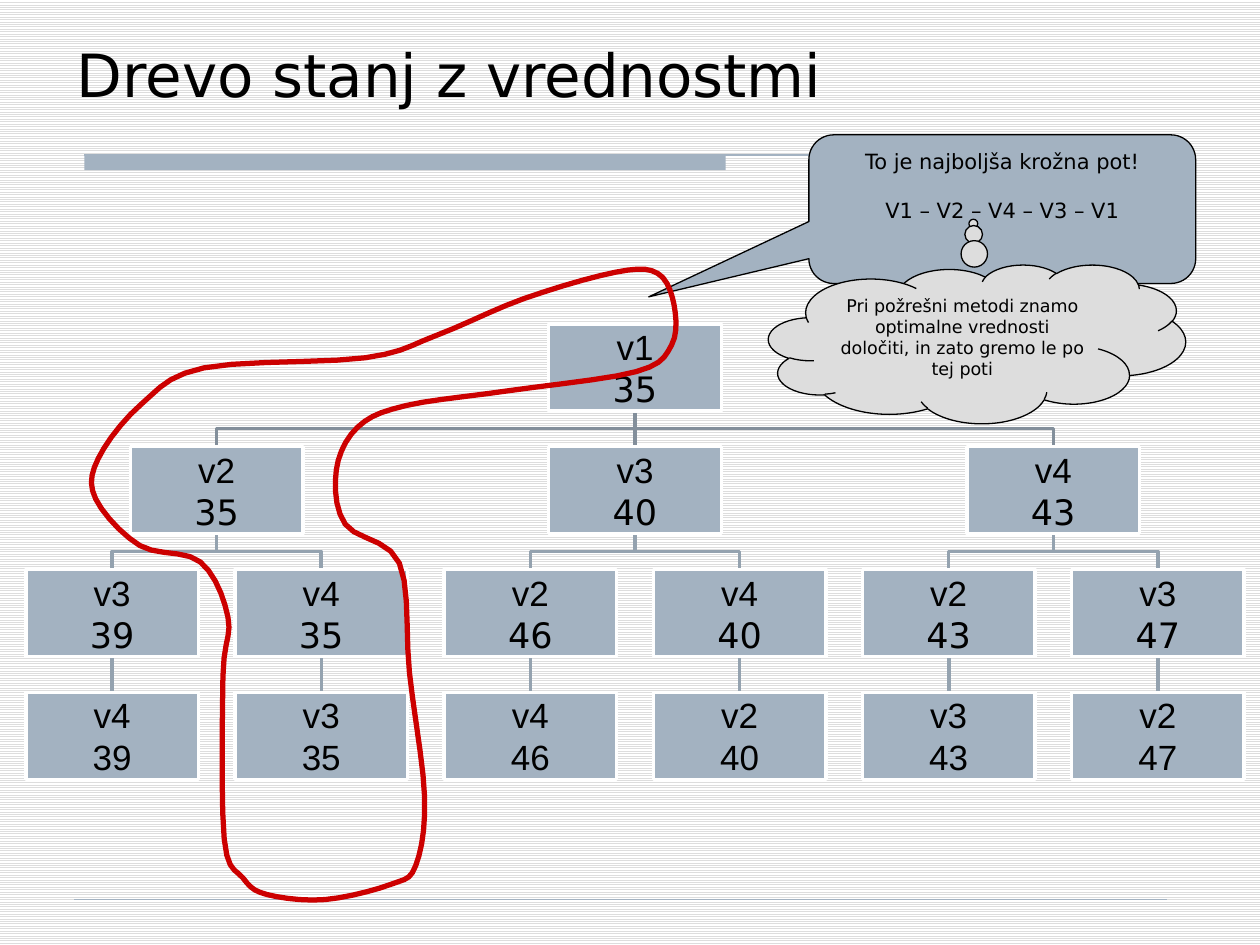
from dataclasses import dataclass

import pptx
import pptx.dml.color
import pptx.enum.dml
import pptx.enum.shapes
import pptx.enum.text
import pptx.oxml
import pptx.util

Inches, Pt = pptx.util.Inches, pptx.util.Pt
SHAPE = pptx.enum.shapes.MSO_SHAPE
ANCHOR = pptx.enum.text.MSO_ANCHOR
ALIGN = pptx.enum.text.PP_ALIGN

SANS, ARIAL = "DejaVu Sans", "Arial"
STEEL, GREY, BLACK, WHITE, RED = "A3B2C1", "DDDDDD", "000000", "FFFFFF", "CC0000"
ROOT_LINK, LINK = "838F9B", "94A2AF"

FIRST_CENTER, COLUMN_STEP = 0.89, 1.66
TOP, ROW_STEP = 2.57, 0.975
BOX_W, BOX_H = 1.37, 0.69

Point = tuple[float, float]


@dataclass
class State:
    name: str
    value: int
    children: tuple["State", ...] = ()
    x: float = 0
    level: int = 0

    @property
    def y(self) -> float:
        return TOP + self.level * ROW_STEP


@dataclass
class Callout:
    kind: int
    box: tuple[float, float, float, float]
    adjustments: tuple[float, ...]
    fill: str
    size: int
    lines: tuple[str, ...]


def branch(name: str, value: int, leaf: str) -> State:
    """A state with a single successor of the same value."""
    return State(name, value, (State(leaf, value),))


TREE = State("v1", 35, (
    State("v2", 35, (branch("v3", 39, "v4"), branch("v4", 35, "v3"))),
    State("v3", 40, (branch("v2", 46, "v4"), branch("v4", 40, "v2"))),
    State("v4", 43, (branch("v2", 43, "v3"), branch("v3", 47, "v2"))),
))

BEST_ROUTE = Callout(
    SHAPE.ROUNDED_RECTANGULAR_CALLOUT, (6.42, 1.07, 3.07, 1.18), (-0.914, 0.59, 0.167),
    STEEL, 12, ("To je najboljša krožna pot!", "V1 – V2 – V4 – V3 – V1"))
GREEDY = Callout(
    SHAPE.CLOUD_CALLOUT, (6.1, 2.1, 3.31, 1.26), (-0.009, -0.758), GREY, 10,
    ("Pri požrešni metodi znamo optimalne vrednosti določiti, in zato gremo le po tej poti",))

# Turning points of the loop around the best route, clockwise from the top
LOOP = [
    (4.89, 2.16), (5.22, 2.17), (5.35, 2.42), (5.33, 2.74), (5.05, 2.95), (4.05, 3.1),
    (3.22, 3.22), (2.84, 3.39), (2.67, 3.73), (2.74, 4.16), (3.17, 4.47), (3.25, 5.34),
    (3.37, 6.32), (3.3, 6.87), (3.1, 7.02), (2.58, 7.14), (2.12, 7.1), (1.93, 6.97),
    (1.78, 6.66), (1.77, 5.37), (1.81, 4.9), (1.59, 4.46), (1.11, 4.33), (0.76, 3.96),
    (0.78, 3.64), (1.12, 3.21), (1.62, 2.92), (2.9, 2.84), (3.47, 2.66), (4.16, 2.37),
]


def rgb(color: str) -> pptx.dml.color.RGBColor:
    return pptx.dml.color.RGBColor.from_string(color)


def set_line(sp, color: str, width: float) -> None:
    sp.line.color.rgb = rgb(color)
    sp.line.width = Pt(width)


def set_font(p, size: int, name: str) -> None:
    p.font.size, p.font.name = Pt(size), name
    p.font.color.rgb = rgb(BLACK)


def add_box(s, kind: int, box: tuple, fill: str):
    sp = s.shapes.add_shape(kind, *map(Inches, box))
    sp.shadow.inherit = False
    sp.fill.solid()
    sp.fill.fore_color.rgb = rgb(fill)
    return sp


def add_line(s, start: Point, end: Point, color: str, width: float) -> None:
    sp = s.shapes.add_connector(pptx.enum.shapes.MSO_CONNECTOR.STRAIGHT,
                                *map(Inches, start + end))
    set_line(sp, color, width)
    sp._element.spPr.append(pptx.oxml.parse_xml(
        '<a:effectLst xmlns:a="http://schemas.openxmlformats.org/drawingml/2006/main"/>'))


def add_outline(s, points: list[Point], color: str, width: float, close: bool = False) -> None:
    emu = [(Inches(x), Inches(y)) for x, y in points]
    builder = s.shapes.build_freeform(*emu[0], scale=1.0)
    builder.add_line_segments(emu[1:], close=close)
    sp = builder.convert_to_shape()
    sp.shadow.inherit = False
    sp.fill.background()
    set_line(sp, color, width)


def smooth_loop(knots: list[Point], steps: int = 5) -> list[Point]:
    """Points of a closed Catmull-Rom curve through the knots."""
    points = []
    for i in range(len(knots)):
        around = [knots[(i + k) % len(knots)] for k in (-1, 0, 1, 2)]
        for t in (j / steps for j in range(steps)):
            points.append(tuple(
                b + t / 2 * (c - a + t * (2 * a - 5 * b + 4 * c - d + t * (3 * (b - c) + d - a)))
                for a, b, c, d in zip(*around)))
    return points


def place(state: State, level: int = 0, column: int = 0) -> int:
    """Set levels and centres; return the next free leaf column."""
    state.level = level
    if not state.children:
        state.x = FIRST_CENTER + column * COLUMN_STEP
        return column + 1
    for child in state.children:
        column = place(child, level + 1, column)
    state.x = (state.children[0].x + state.children[-1].x) / 2
    return column


def draw_links(s, state: State) -> None:
    color = LINK if state.level else ROOT_LINK
    bottom = state.y + BOX_H
    for child in state.children:
        draw_links(s, child)
        middle = (bottom + child.y) / 2
        if abs(child.x - state.x) < 0.01:
            add_line(s, (state.x, bottom), (child.x, child.y), color, 2)
        else:
            add_outline(s, [(state.x, bottom), (state.x, middle),
                            (child.x, middle), (child.x, child.y)], color, 2)


def draw_states(s, state: State) -> None:
    sp = add_box(s, SHAPE.RECTANGLE, (state.x - BOX_W / 2, state.y, BOX_W, BOX_H), STEEL)
    set_line(sp, WHITE, 2)
    tf = sp.text_frame
    tf.margin_left = tf.margin_right = tf.margin_top = tf.margin_bottom = Inches(0.01)
    tf.vertical_anchor = ANCHOR.MIDDLE
    tf.text = f"{state.name}\n{state.value}"
    for p, font in zip(tf.paragraphs, (ARIAL, SANS if state.children else ARIAL)):
        p.alignment = ALIGN.CENTER
        set_font(p, 20, font)
    for child in state.children:
        draw_states(s, child)


def draw_callout(s, callout: Callout) -> None:
    sp = add_box(s, callout.kind, callout.box, callout.fill)
    for i, value in enumerate(callout.adjustments):
        sp.adjustments[i] = value
    set_line(sp, BLACK, 0.75)
    tf = sp.text_frame
    tf.word_wrap = True
    tf.vertical_anchor = ANCHOR.TOP
    tf.text = "\n".join(callout.lines)
    for i, p in enumerate(tf.paragraphs):
        p.alignment = ALIGN.CENTER
        p.space_before = Pt(14 if i else 0)
        set_font(p, callout.size, SANS)


def main() -> None:
    prs = pptx.Presentation()
    prs.slide_width, prs.slide_height = Inches(10), Inches(7.5)
    s = prs.slides.add_slide(prs.slide_layouts[5])
    fill = s.background.fill
    fill.patterned()
    fill.pattern = pptx.enum.dml.MSO_PATTERN.LIGHT_HORIZONTAL
    fill.fore_color.rgb, fill.back_color.rgb = rgb(GREY), rgb(WHITE)

    title = s.shapes.title
    title.left, title.top, title.width, title.height = map(Inches, (0.51, 0.21, 8.75, 0.75))
    title.text_frame.text = "Drevo stanj z vrednostmi"
    title.text_frame.vertical_anchor = ANCHOR.MIDDLE
    p = title.text_frame.paragraphs[0]
    p.alignment = ALIGN.LEFT
    set_font(p, 34, SANS)

    bar = add_box(s, SHAPE.RECTANGLE, (0.67, 1.23, 5.09, 0.12), STEEL)
    bar.line.fill.background()
    add_line(s, (0.67, 1.23), (9.37, 1.23), STEEL, 0.75)
    add_line(s, (0.59, 7.14), (9.26, 7.14), STEEL, 0.25)

    place(TREE)
    draw_links(s, TREE)
    draw_states(s, TREE)
    draw_callout(s, BEST_ROUTE)
    add_outline(s, smooth_loop(LOOP), RED, 3, close=True)
    draw_callout(s, GREEDY)
    prs.save("out.pptx")


if __name__ == "__main__":
    main()
